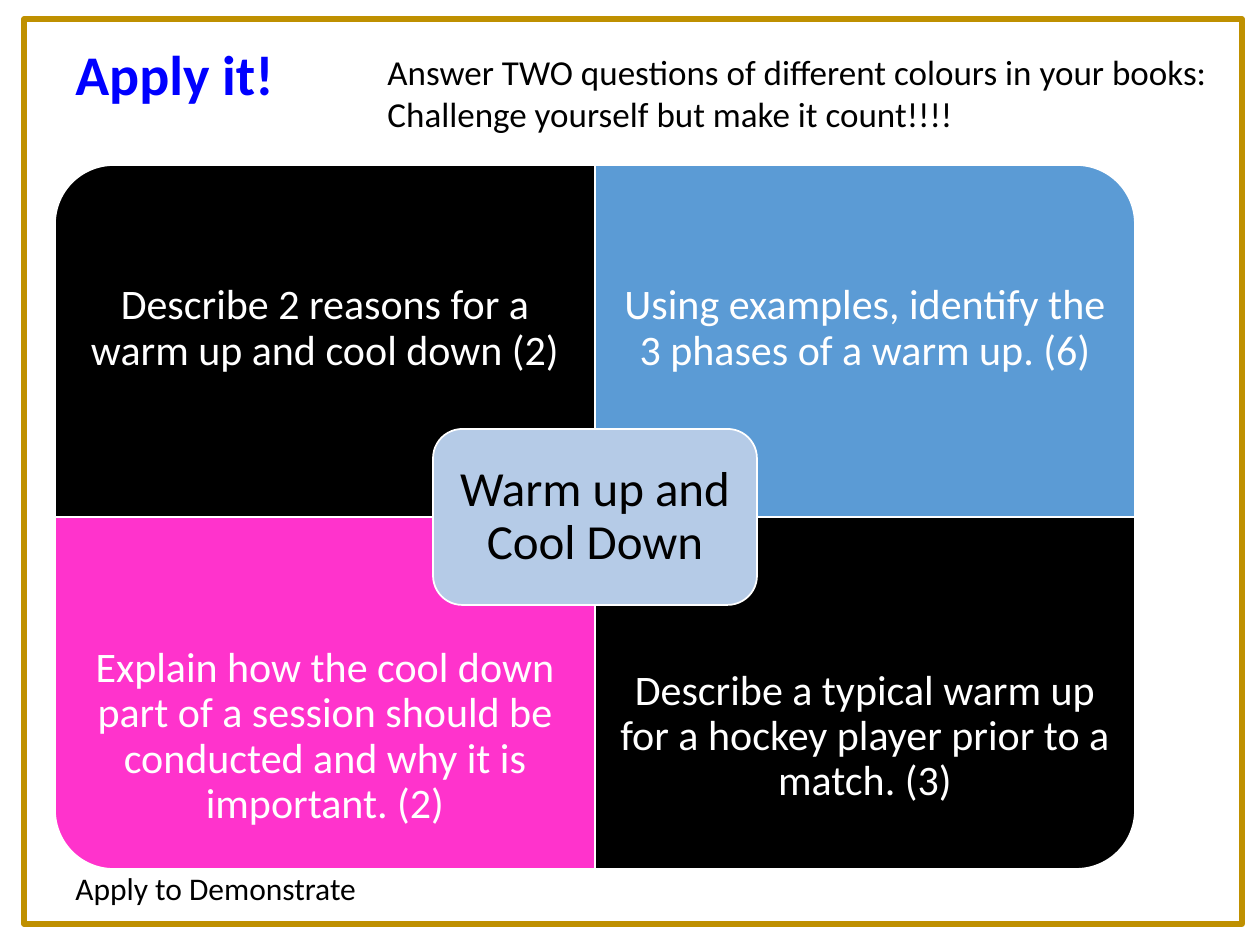
from pptx import Presentation
from pptx.dml.color import RGBColor
from pptx.enum.shapes import MSO_SHAPE as SHAPE
from pptx.enum.text import MSO_ANCHOR as ANCHOR, MSO_AUTO_SIZE as AUTO, PP_ALIGN as ALIGN
from pptx.util import Pt

EMU_PER_PX = 914400 / 126
COLOURS = {
    "frame": "BF9000",
    "title": "0000FF",
    "ink": "000000",
    "paper": "FFFFFF",
    "blue": "5B9BD5",
    "pink": "FF33CC",
    "topic": "B5CBE7",
}
GRID_LEFT, GRID_TOP = 55, 165
PANEL_W, PANEL_H = 540, 352
QUESTION_H = 264
QUESTION_INSET = 24
TOP_ROW_DROP = 64
QUESTIONS = [
    (0, 0, 270, "ink", "Describe 2 reasons for a warm up and cool down (2)"),
    (1, 0, 0, "blue", "Using examples, identify the 3 phases of a warm up. (6)"),
    (0, 1, 180, "pink", "Explain how the cool down part of a session should be "
                        "conducted and why it is important. (2)"),
    (1, 1, 90, "ink", "Describe a typical warm up for a hockey player prior to a match. (3)"),
]


def px(length):
    return round(length * EMU_PER_PX)


def rgb(name):
    return RGBColor.from_string(COLOURS[name])


def add_panel(slide, preset, box, fill, outline="paper", weight=1):
    panel = slide.shapes.add_shape(preset, *map(px, box))
    panel.shadow.inherit = False
    if fill:
        panel.fill.solid()
        panel.fill.fore_color.rgb = rgb(fill)
    else:
        panel.fill.background()
    panel.line.color.rgb = rgb(outline)
    panel.line.width = Pt(weight)
    return panel


def write(frame, text, size, colour, bold=False):
    frame.text = text
    for paragraph in frame.paragraphs:
        for run in paragraph.runs:
            run.font.name = "Calibri"
            run.font.size = Pt(size)
            run.font.bold = bold
            run.font.color.rgb = rgb(colour)


def centre(frame, inset, drop=0):
    frame.word_wrap = True
    frame.vertical_anchor = ANCHOR.MIDDLE
    frame.margin_left = frame.margin_right = frame.margin_bottom = px(inset)
    frame.margin_top = px(inset + drop)
    for paragraph in frame.paragraphs:
        paragraph.alignment = ALIGN.CENTER
        paragraph.line_spacing = 0.9


def add_label(slide, box, text, size, colour="ink", bold=False, wrap=False):
    frame = slide.shapes.add_textbox(*map(px, box)).text_frame
    write(frame, text, size, colour, bold)
    frame.word_wrap = wrap
    frame.auto_size = AUTO.SHAPE_TO_FIT_TEXT


def add_question(slide, column, row, rotation, fill, text):
    left = GRID_LEFT + column * PANEL_W
    top = GRID_TOP + row * PANEL_H
    box = (left, top, PANEL_W, PANEL_H)
    if rotation % 180:
        shift = (PANEL_W - PANEL_H) // 2
        box = (left + shift, top - shift, PANEL_H, PANEL_W)
    add_panel(slide, SHAPE.ROUND_1_RECTANGLE, box, fill).rotation = rotation

    text_top = top + row * (PANEL_H - QUESTION_H)
    question_box = (left, text_top, PANEL_W, QUESTION_H)
    frame = slide.shapes.add_textbox(*map(px, question_box)).text_frame
    write(frame, text, 24, "paper")
    centre(frame, QUESTION_INSET, 0 if row else TOP_ROW_DROP)


def add_topic(slide, text):
    width, height = 324, PANEL_H // 2
    left = GRID_LEFT + PANEL_W - width // 2
    top = GRID_TOP + PANEL_H - height // 2
    topic = add_panel(slide, SHAPE.ROUNDED_RECTANGLE, (left, top, width, height), "topic")
    write(topic.text_frame, text, 28, "ink")
    centre(topic.text_frame, 15)


def main():
    deck = Presentation()
    deck.slide_width, deck.slide_height = px(1260), px(945)
    slide = deck.slides.add_slide(deck.slide_layouts[6])

    add_panel(slide, SHAPE.RECTANGLE, (24, 19, 1218, 905), None, "frame", 3)
    add_label(slide, (63, 863, 741, 50), "Apply to Demonstrate", 18, wrap=True)
    for question in QUESTIONS:
        add_question(slide, *question)
    add_topic(slide, "Warm up and Cool Down")
    add_label(slide, (63, 33, 226, 81), "Apply it!", 32, "title", bold=True)
    add_label(slide, (375, 44, 853, 97),
              "Answer TWO questions of different colours in your books:\n"
              "Challenge yourself but make it count!!!!", 20)

    deck.save("out.pptx")


if __name__ == "__main__":
    main()
